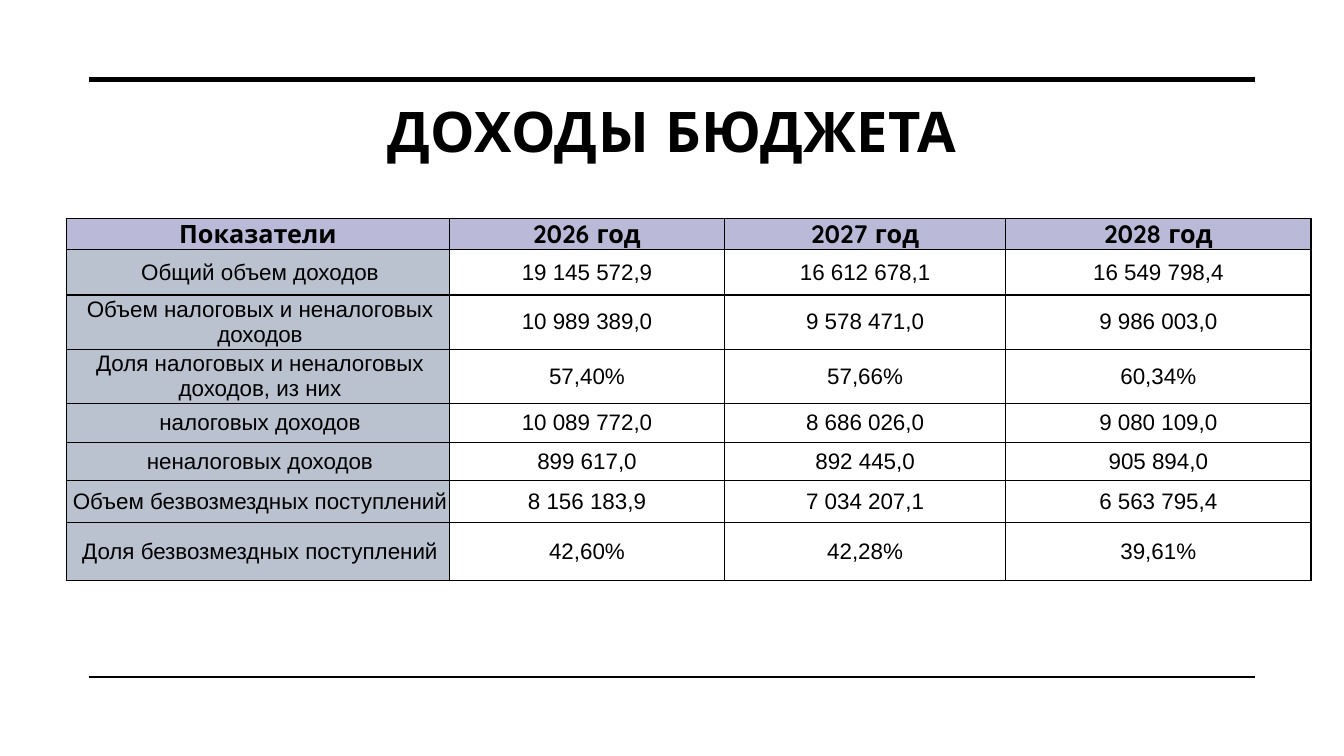
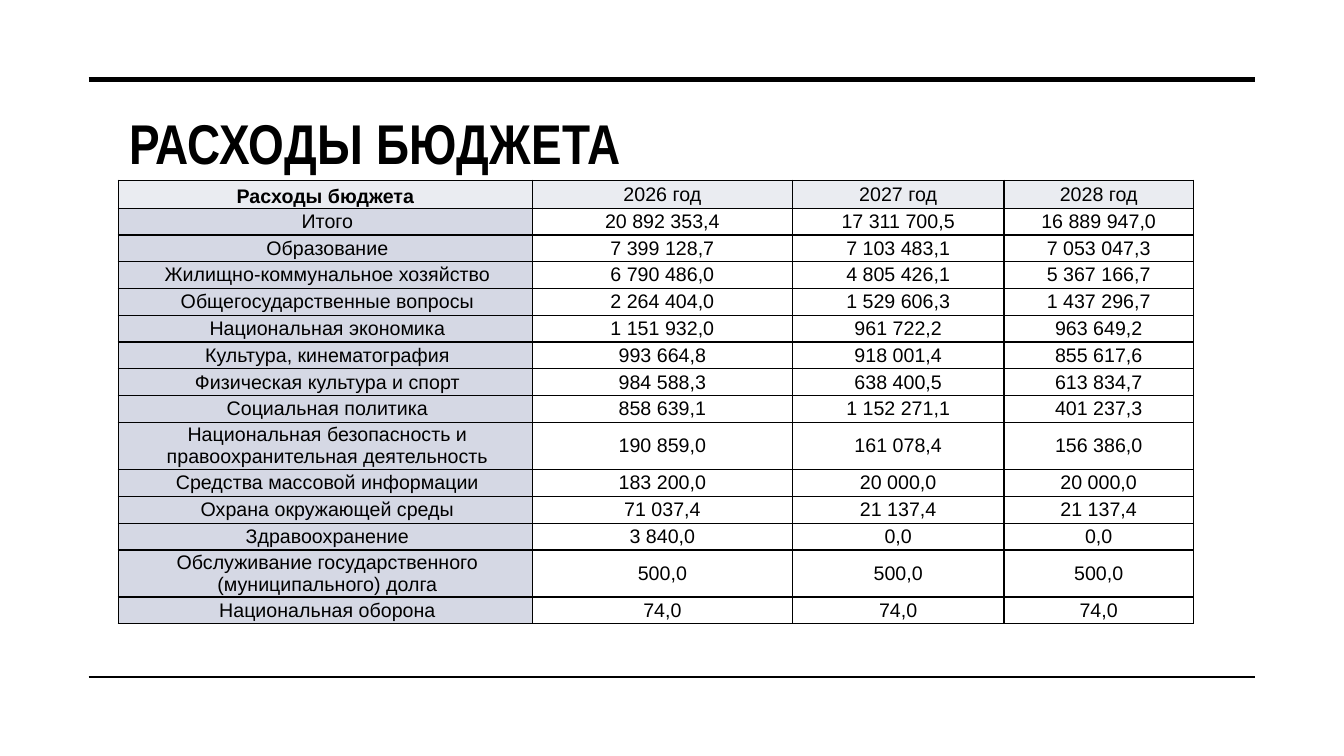
"""Build two slides with the income and the expenses of a budget for 2026-2028."""
from lxml import etree
from pptx import Presentation
from pptx.dml.color import RGBColor
from pptx.enum.shapes import MSO_CONNECTOR
from pptx.enum.text import MSO_ANCHOR, PP_ALIGN
from pptx.oxml.ns import qn
from pptx.util import Inches, Pt

STRAIGHT = MSO_CONNECTOR.STRAIGHT
LEFT, CENTER = PP_ALIGN.LEFT, PP_ALIGN.CENTER
MIDDLE, BOTTOM = MSO_ANCHOR.MIDDLE, MSO_ANCHOR.BOTTOM

COLORS = {
    "ink": "000000",
    "paper": "FFFFFF",
    "income_head": "BABAD8",
    "income_label": "BAC1CF",
    "expense_head": "EAECF1",
    "expense_label": "D5D8E4",
}
YEARS = ("2026 год", "2027 год", "2028 год")
RULES = ((10.5, 3.5), (89.55, 1))
RULE_LEFT, RULE_RIGHT = 6.6, 93.4
LABEL_INDENT = Inches(0.04)

SLIDES = [
    {
        "title": "ДОХОДЫ БЮДЖЕТА",
        "title_font": "Quicksand",
        "title_area": (6.15, 7.6, 87.7, 19.1),
        "title_align": CENTER,
        "title_anchor": MIDDLE,
        "table_area": (4.95, 28.9, 92.6, 47.6),
        "columns": (3.8, 2.73, 2.79, 3.03),
        "row_weights": (0.31, 0.45, 0.54, 0.51, 0.39, 0.38, 0.41, 0.58),
        "head_fill": "income_head",
        "label_fill": "income_label",
        "head_font": ("Quicksand", 18),
        "body_font": ("Arial", 16),
        "bold_years": True,
        "corner_anchor": MIDDLE,
        "rows": [
            ("Показатели", *YEARS),
            ("Общий объем доходов", "19 145 572,9", "16 612 678,1", "16 549 798,4"),
            ("Объем налоговых и неналоговых доходов", "10 989 389,0", "9 578 471,0", "9 986 003,0"),
            ("Доля налоговых и неналоговых доходов, из них", "57,40%", "57,66%", "60,34%"),
            ("налоговых доходов", "10 089 772,0", "8 686 026,0", "9 080 109,0"),
            ("неналоговых доходов", "899 617,0", "892 445,0", "905 894,0"),
            ("Объем безвозмездных поступлений", "8 156 183,9", "7 034 207,1", "6 563 795,4"),
            ("Доля безвозмездных поступлений", "42,60%", "42,28%", "39,61%"),
        ],
    },
    {
        "title": "РАСХОДЫ БЮДЖЕТА",
        "title_font": "Arial Narrow",
        "title_area": (8.9, 13.2, 84.5, 10.7),
        "title_align": LEFT,
        "title_anchor": BOTTOM,
        "table_area": (8.8, 23.85, 80, 57.9),
        "columns": (4.11, 2.58, 2.1, 1.88),
        "row_weights": (1.04, *[1] * 8, 1.64, *[1] * 3, 1.64, 1),
        "head_fill": "expense_head",
        "label_fill": "expense_label",
        "head_font": ("Arial", 14),
        "body_font": ("Arial", 14),
        "bold_years": False,
        "corner_anchor": BOTTOM,
        "rows": [
            ("Расходы бюджета", *YEARS),
            ("Итого", "20 892 353,4", "17 311 700,5", "16 889 947,0"),
            ("Образование", "7 399 128,7", "7 103 483,1", "7 053 047,3"),
            ("Жилищно-коммунальное хозяйство", "6 790 486,0", "4 805 426,1", "5 367 166,7"),
            ("Общегосударственные вопросы", "2 264 404,0", "1 529 606,3", "1 437 296,7"),
            ("Национальная экономика", "1 151 932,0", "961 722,2", "963 649,2"),
            ("Культура, кинематография", "993 664,8", "918 001,4", "855 617,6"),
            ("Физическая культура и спорт", "984 588,3", "638 400,5", "613 834,7"),
            ("Социальная политика", "858 639,1", "1 152 271,1", "401 237,3"),
            ("Национальная безопасность и правоохранительная деятельность",
             "190 859,0", "161 078,4", "156 386,0"),
            ("Средства массовой информации", "183 200,0", "20 000,0", "20 000,0"),
            ("Охрана окружающей среды", "71 037,4", "21 137,4", "21 137,4"),
            ("Здравоохранение", "3 840,0", "0,0", "0,0"),
            ("Обслуживание государственного (муниципального) долга", "500,0", "500,0", "500,0"),
            ("Национальная оборона", "74,0", "74,0", "74,0"),
        ],
    },
]

deck = Presentation()
deck.slide_width, deck.slide_height = Inches(13.33), Inches(7.5)


def area(left, top, width, height):
    """Turn percentages of the slide into lengths."""
    across, down = deck.slide_width / 100, deck.slide_height / 100
    return int(left * across), int(top * down), int(width * across), int(height * down)


def style(para, font, size, bold, align):
    """Format a paragraph and its only run."""
    para.alignment = align
    span = para.runs[0]
    span.font.name, span.font.size, span.font.bold = font, Pt(size), bold
    span.font.color.rgb = RGBColor.from_string(COLORS["ink"])
    return span


for content in SLIDES:
    page = deck.slides.add_slide(deck.slide_layouts[6])

    for height, weight in RULES:
        left, top, width, _ = area(RULE_LEFT, height, RULE_RIGHT - RULE_LEFT, 0)
        rule = page.shapes.add_connector(STRAIGHT, left, top, left + width, top)
        rule.line.color.rgb = RGBColor.from_string(COLORS["ink"])
        rule.line.width = Pt(weight)
        etree.SubElement(rule._element.spPr, qn("a:effectLst"))

    box = page.shapes.add_textbox(*area(*content["title_area"]))
    box.text_frame.word_wrap = True
    box.text_frame.vertical_anchor = content["title_anchor"]
    box.text_frame.text = content["title"]
    span = style(box.text_frame.paragraphs[0], content["title_font"], 40, True, content["title_align"])
    span.font._element.set("spc", "30")

    rows, columns, weights = content["rows"], content["columns"], content["row_weights"]
    left, top, width, height = area(*content["table_area"])
    table = page.shapes.add_table(len(rows), len(columns), left, top, width, height).table
    for column, share in zip(table.columns, columns):
        column.width = int(width * share / sum(columns))
    for row, share in zip(table.rows, weights):
        row.height = int(height * share / sum(weights))

    for row_index, values in enumerate(rows):
        for column_index, value in enumerate(values):
            is_head, is_label = row_index == 0, column_index == 0
            cell = table.cell(row_index, column_index)
            cell.margin_left = cell.margin_right = cell.margin_top = cell.margin_bottom = 0
            cell.vertical_anchor = content["corner_anchor"] if is_head and is_label else MIDDLE
            cell.text_frame.text = value
            para = cell.text_frame.paragraphs[0]
            font, size = content["head_font" if is_head else "body_font"]
            style(para, font, size, is_head and (is_label or content["bold_years"]), CENTER)
            if is_label and not is_head:
                para._p.get_or_add_pPr().set("marL", str(LABEL_INDENT))

            props = cell._tc.get_or_add_tcPr()
            for side in ("a:lnL", "a:lnR", "a:lnT", "a:lnB"):
                border = etree.SubElement(props, qn(side), w=str(Pt(1)))
                paint = etree.SubElement(border, qn("a:solidFill"))
                etree.SubElement(paint, qn("a:srgbClr"), val=COLORS["ink"])
            fill = content["head_fill"] if is_head else content["label_fill"] if is_label else "paper"
            cell.fill.solid()
            cell.fill.fore_color.rgb = RGBColor.from_string(COLORS[fill])

deck.save("out.pptx")
